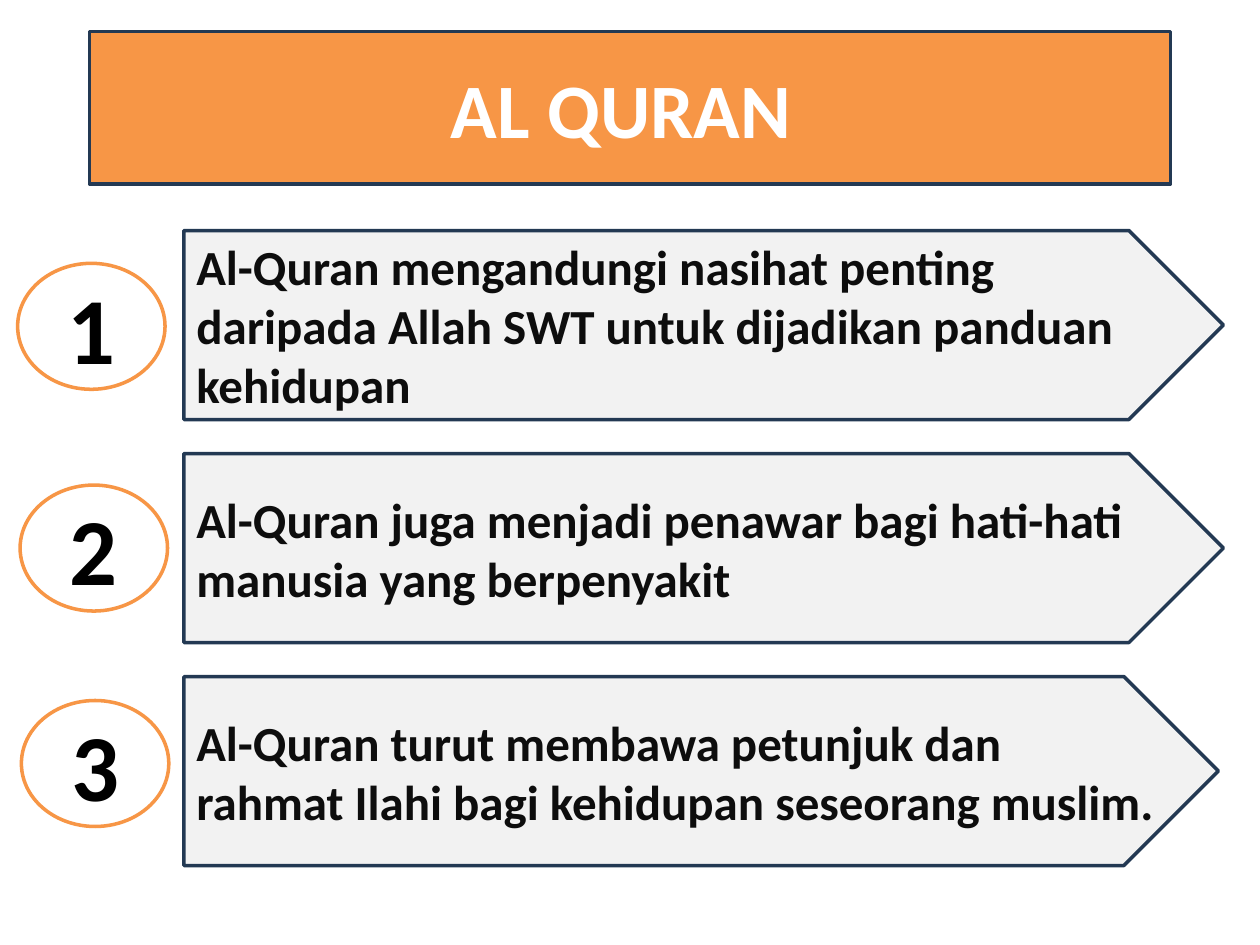
from dataclasses import dataclass

import pptx
import pptx.dml.color
import pptx.enum.shapes
import pptx.enum.text
import pptx.oxml
import pptx.oxml.ns
import pptx.util

Inches = pptx.util.Inches
SHAPES = pptx.enum.shapes.MSO_SHAPE
ALIGN = pptx.enum.text.PP_ALIGN


@dataclass(frozen=True)
class Theme:
    font: str = "Calibri"
    accent: str = "F79646"
    outline: str = "233953"
    panel: str = "F2F2F2"
    white: str = "FFFFFF"
    text: str = "0D0D0D"
    number: str = "000000"
    title_size: int = 44
    text_size: int = 28
    number_size: int = 54
    line_width: int = 2


THEME = Theme()
ROW_TOP = 1.83
ROW_PITCH = 1.77
ROW_HEIGHT = 1.5
ARROW_LEFT = 1.46
BADGE_SIZE = (1.17, 1)

POINTS = [
    ("Al-Quran mengandungi nasihat penting daripada Allah SWT untuk dijadikan panduan kehidupan",
     8.25, (0.14, 2.09)),
    ("Al-Quran juga menjadi penawar bagi hati-hati manusia yang berpenyakit",
     8.25, (0.16, 3.85)),
    ("Al-Quran turut membawa petunjuk dan rahmat Ilahi bagi kehidupan seseorang muslim.",
     8.21, (0.17, 5.56)),
]


def color(value):
    return pptx.dml.color.RGBColor.from_string(value)


def paint(shape, fill, line):
    shape.fill.solid()
    shape.fill.fore_color.rgb = color(fill)
    shape.line.color.rgb = color(line)
    shape.line.width = pptx.util.Pt(THEME.line_width)


def write(shape, text, size, font_color, alignment):
    frame = shape.text_frame
    frame.text = text
    frame.word_wrap = True
    frame.auto_size = pptx.enum.text.MSO_AUTO_SIZE.NONE
    frame.vertical_anchor = pptx.enum.text.MSO_ANCHOR.MIDDLE
    paragraph = frame.paragraphs[0]
    paragraph.alignment = alignment
    font = paragraph.runs[0].font
    font.name = THEME.font
    font.size = pptx.util.Pt(size)
    font.bold = True
    font.color.rgb = color(font_color)


def add_box(slide, kind, left, top, width, height, fill, line):
    shape = slide.shapes.add_shape(
        kind, Inches(left), Inches(top), Inches(width), Inches(height))
    shape.shadow.inherit = False
    paint(shape, fill, line)
    return shape


def format_title(slide, text):
    title = slide.shapes.title
    title.left, title.top = Inches(0.71), Inches(0.25)
    title.width, title.height = Inches(8.58), Inches(1.21)
    geometry = pptx.oxml.parse_xml(
        f'<a:prstGeom {pptx.oxml.ns.nsdecls("a")} prst="roundRect"><a:avLst/></a:prstGeom>')
    title.element.spPr.append(geometry)
    paint(title, THEME.accent, THEME.outline)
    write(title, text, THEME.title_size, THEME.white, ALIGN.CENTER)


def add_arrow(slide, row, text, width):
    top = ROW_TOP + row * ROW_PITCH
    arrow = add_box(slide, SHAPES.PENTAGON, ARROW_LEFT, top, width, ROW_HEIGHT,
                    THEME.panel, THEME.outline)
    write(arrow, text, THEME.text_size, THEME.text, ALIGN.LEFT)


def add_badge(slide, number, position):
    badge = add_box(slide, SHAPES.FLOWCHART_CONNECTOR, *position, *BADGE_SIZE,
                    THEME.white, THEME.accent)
    write(badge, str(number), THEME.number_size, THEME.number, ALIGN.CENTER)


def main():
    presentation = pptx.Presentation()
    presentation.slide_width = Inches(10)
    presentation.slide_height = Inches(7.5)
    slide = presentation.slides.add_slide(presentation.slide_layouts[5])
    format_title(slide, "AL QURAN ")
    for row, (text, width, badge_position) in enumerate(POINTS):
        add_arrow(slide, row, text, width)
        add_badge(slide, row + 1, badge_position)
    presentation.save("out.pptx")


if __name__ == "__main__":
    main()
